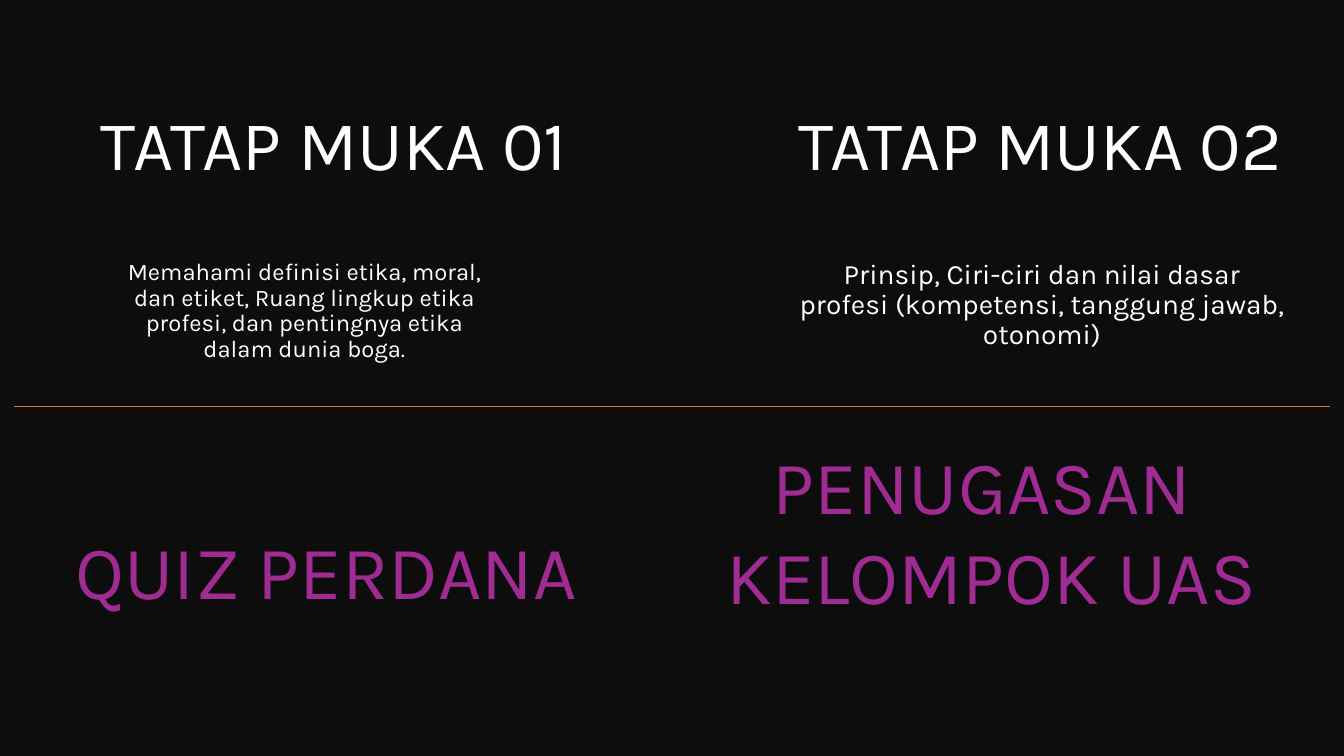
from pptx import Presentation, util as u
from pptx.dml import color
from pptx.enum import shapes, text
from pptx.oxml import ns
from lxml import etree

WHITE, PURPLE, ORANGE, BLACK = "FFFFFF", "A02B93", "E97132", "0D0D0D"
LEFT, MID = text.PP_ALIGN.LEFT, text.PP_ALIGN.CENTER
TOP, LOW = text.MSO_ANCHOR.TOP, text.MSO_ANCHOR.BOTTOM
HEAD = {"size": 50, "hue": WHITE, "frame": {"word_wrap": True, "vertical_anchor": LOW},
        "para": {"alignment": LEFT, "line_spacing": 0.9}}
BODY = {"hue": WHITE, "frame": {"word_wrap": True, "vertical_anchor": TOP},
        "para": {"alignment": MID, "line_spacing": 0.9, "space_before": u.Pt(10)}}
TASK = {"size": 54, "hue": PURPLE, "frame": {"word_wrap": False, "vertical_anchor": TOP},
        "para": {"alignment": MID}}


def rgb(code):
    return color.RGBColor.from_string(code)


def apply(item, values):
    for name, value in values.items():
        setattr(item, name, value)


def place(shape, area):
    apply(shape, dict(zip(("left", "top", "width", "height"), map(u.Inches, area))))


def panel(slide):
    rect = slide.shapes.add_shape(shapes.MSO_SHAPE.RECTANGLE,
                                  *map(u.Inches, (0, 0, 13.33, 7.5)))
    rect.shadow.inherit = False
    rect.line.fill.background()
    return rect.fill


def plain(slide):
    fill = panel(slide)
    fill.solid()
    fill.fore_color.rgb = rgb(BLACK)


def fade(slide):
    fill = panel(slide)
    fill.gradient()
    fill.gradient_angle = 0
    for stop, spot in zip(fill.gradient_stops, (0.36, 0.81)):
        stop.position = spot
        stop.color.rgb = rgb(BLACK)
    tint = stop._gs.find(ns.qn("a:srgbClr"))
    etree.SubElement(tint, ns.qn("a:alpha"), val="0")


def write(shape, lines, style):
    frame = shape.text_frame
    frame.text = lines
    apply(frame, {"auto_size": text.MSO_AUTO_SIZE.NONE, **style["frame"]})
    for para in frame.paragraphs:
        apply(para, style["para"])
        for run in para.runs:
            apply(run.font, {"name": "Karla", "size": u.Pt(style["size"])})
            run.font.color.rgb = rgb(style["hue"])


def label(slide, area, lines, style):
    box = slide.shapes.add_textbox(*map(u.Inches, area))
    write(box, lines, style)


def rule(slide, start, end, y):
    line = slide.shapes.add_connector(shapes.MSO_CONNECTOR.STRAIGHT,
                                      *map(u.Inches, (start, y, end, y)))
    line.line.color.rgb = rgb(ORANGE)
    line.line.width = u.Pt(1)
    etree.SubElement(line._element.spPr, ns.qn("a:effectLst"))


def main():
    deck = Presentation()
    apply(deck, {"slide_width": u.Inches(13.33), "slide_height": u.Inches(7.5)})
    slide = deck.slides.add_slide(deck.slide_layouts[5])
    plain(slide)
    fade(slide)

    title = slide.shapes.title
    slide.shapes._spTree.append(title._element)
    place(title, (0.9, 0.82, 6.02, 1.07))
    write(title, "TATAP MUKA 01", HEAD)
    label(slide, (7.82, 0.82, 6.02, 1.07), "TATAP MUKA 02", HEAD)

    label(slide, (1.03, 2.53, 3.98, 1.3),
          "Memahami definisi etika, moral, dan etiket, Ruang lingkup etika "
          "profesi, dan pentingnya etika dalam dunia boga.", {**BODY, "size": 17})
    label(slide, (7.82, 2.53, 5.03, 1.81),
          "Prinsip, Ciri-ciri dan nilai dasar profesi "
          "(kompetensi, tanggung jawab, otonomi)", {**BODY, "size": 20})

    rule(slide, 13.19, 0.14, 4.03)
    label(slide, (0.14, 5.15, 6.19, 1.01), "QUIZ PERDANA", TASK)
    label(slide, (7.07, 4.3, 5.52, 1.92), "PENUGASAN \nKELOMPOK UAS", TASK)
    deck.save("out.pptx")


if __name__ == "__main__":
    main()
